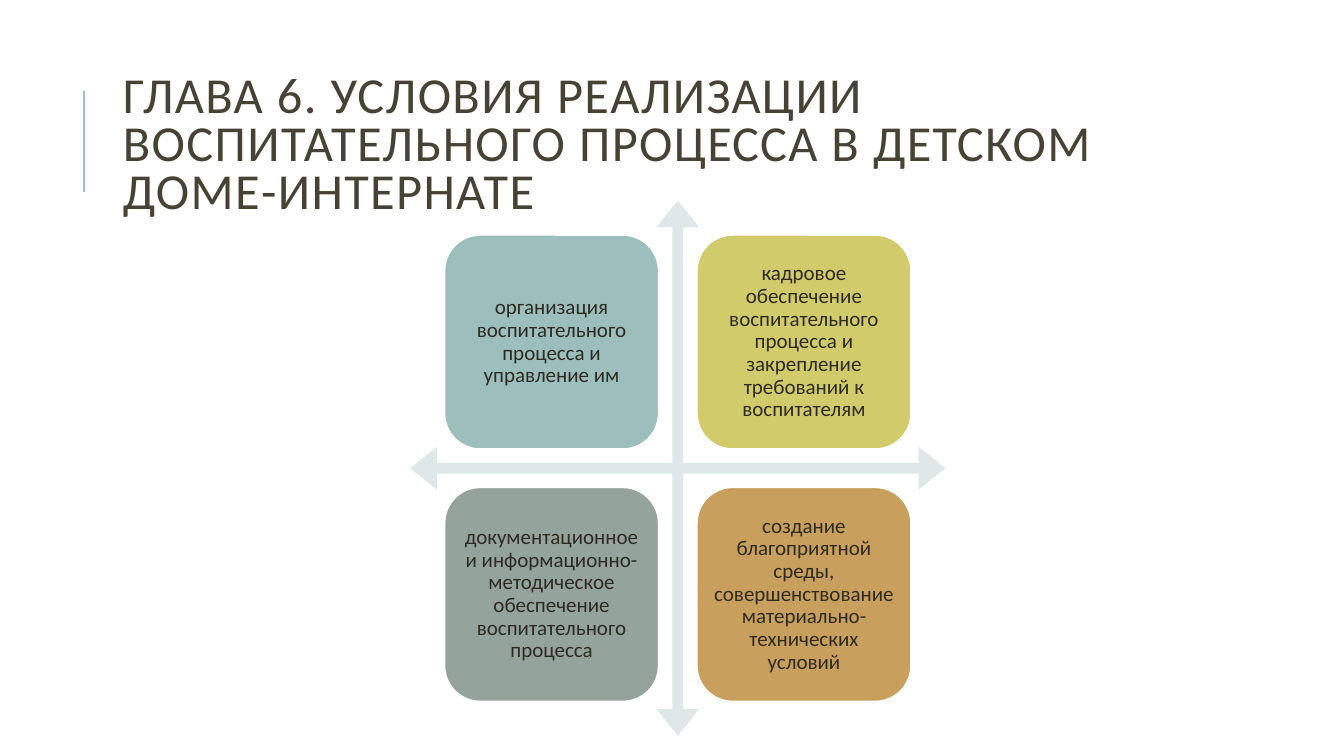
from dataclasses import dataclass

from lxml.etree import SubElement
from pptx import Presentation
from pptx.dml.color import RGBColor
from pptx.enum.shapes import MSO_CONNECTOR as Connector, MSO_SHAPE as Shape
from pptx.enum.text import MSO_ANCHOR as Anchor, MSO_AUTO_SIZE as AutoSize, PP_ALIGN as Align
from pptx.oxml.ns import qn
from pptx.slide import Slide
from pptx.util import Pt


@dataclass(frozen=True)
class Theme:
    font: str = "Calibri"
    title_size: float = 36
    tile_size: float = 15
    title: str = "474233"
    text: str = "2E2B21"
    accent: str = "9CBEBD"
    arrow: str = "DEE8E8"
    border: str = "FFFFFF"


@dataclass(frozen=True)
class Tile:
    text: str
    fill: str


THEME = Theme()
TITLE = "ГЛАВА 6. УСЛОВИЯ РЕАЛИЗАЦИИ ВОСПИТАТЕЛЬНОГО ПРОЦЕССА В ДЕТСКОМ ДОМЕ-ИНТЕРНАТЕ"
TILES = [
    Tile("организация воспитательного процесса и управление им", THEME.accent),
    Tile("кадровое обеспечение воспитательного процесса и закрепление требований к воспитателям", "D2CB6C"),
    Tile("документационное и информационно-методическое обеспечение воспитательного процесса", "95A39D"),
    Tile("создание благоприятной среды, совершенствование материально-технических условий", "C89F5D"),
]

# Matrix geometry in points
ARROW_LEFT, ARROW_TOP, ARROW_SIZE = 293, 143.3, 382.3
TILE_SIZE, TILE_PITCH = 153, 180.3
TILE_MARGIN = (ARROW_SIZE - TILE_SIZE - TILE_PITCH) / 2


def rgb(value: str) -> RGBColor:
    return RGBColor.from_string(value)


def add_accent_line(slide: Slide) -> None:
    line = slide.shapes.add_connector(Connector.STRAIGHT, Pt(60), Pt(137), Pt(60), Pt(65))
    line.line.color.rgb = rgb(THEME.accent)
    line.line.width = Pt(1.5)
    SubElement(line._element.spPr, qn("a:effectLst"))


def set_title(slide: Slide) -> None:
    title = slide.shapes.title
    title.left, title.top, title.width, title.height = Pt(80.64), Pt(46), Pt(765.36), Pt(118)
    tf = title.text_frame
    tf.text = TITLE
    tf.word_wrap = True
    tf.auto_size = AutoSize.NONE
    tf.vertical_anchor = Anchor.MIDDLE
    p = tf.paragraphs[0]
    p.alignment = Align.LEFT
    p.line_spacing = 0.8
    p.space_before = Pt(0)
    font = p.runs[0].font
    font.name, font.size, font.color.rgb = THEME.font, Pt(THEME.title_size), rgb(THEME.title)
    p.runs[0]._r.get_or_add_rPr().set("spc", "100")


def add_arrows(slide: Slide) -> None:
    arrows = slide.shapes.add_shape(
        Shape.QUAD_ARROW, Pt(ARROW_LEFT), Pt(ARROW_TOP), Pt(ARROW_SIZE), Pt(ARROW_SIZE))
    for i, value in enumerate((0.02, 0.04, 0.05)):
        arrows.adjustments[i] = value
    arrows.shadow.inherit = False
    arrows.fill.solid()
    arrows.fill.fore_color.rgb = rgb(THEME.arrow)
    arrows.line.fill.background()


def add_tile(slide: Slide, tile: Tile, row: int, col: int) -> None:
    left = ARROW_LEFT + TILE_MARGIN + col * TILE_PITCH
    top = ARROW_TOP + TILE_MARGIN + row * TILE_PITCH
    sp = slide.shapes.add_shape(
        Shape.ROUNDED_RECTANGLE, Pt(left), Pt(top), Pt(TILE_SIZE), Pt(TILE_SIZE))
    sp.shadow.inherit = False
    sp.fill.solid()
    sp.fill.fore_color.rgb = rgb(tile.fill)
    sp.line.color.rgb = rgb(THEME.border)
    sp.line.width = Pt(1.25)
    tf = sp.text_frame
    tf.text = tile.text
    tf.word_wrap = True
    tf.vertical_anchor = Anchor.MIDDLE
    tf.margin_left = tf.margin_right = tf.margin_top = tf.margin_bottom = Pt(4.5)
    p = tf.paragraphs[0]
    p.alignment = Align.CENTER
    p.line_spacing = 0.9
    font = p.runs[0].font
    font.name, font.size, font.color.rgb = THEME.font, Pt(THEME.tile_size), rgb(THEME.text)


def main() -> None:
    prs = Presentation()
    prs.slide_width, prs.slide_height = Pt(960), Pt(540)
    slide = prs.slides.add_slide(prs.slide_layouts[5])

    # Heading
    add_accent_line(slide)
    set_title(slide)

    # Matrix of conditions, two tiles per row
    add_arrows(slide)
    for i, tile in enumerate(TILES):
        add_tile(slide, tile, *divmod(i, 2))

    prs.save("out.pptx")


if __name__ == "__main__":
    main()
